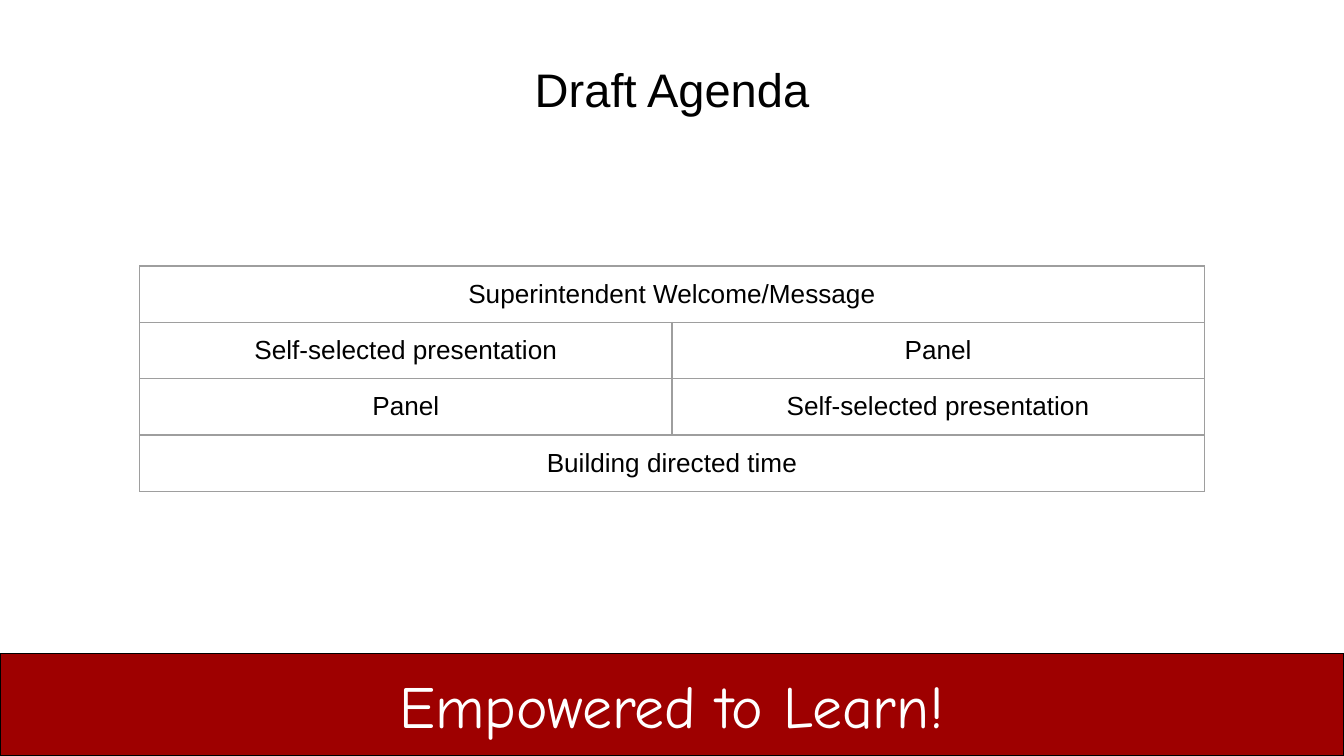
from typing import NamedTuple

from lxml.etree import SubElement
from pptx import Presentation
from pptx.dml.color import RGBColor
from pptx.enum.shapes import MSO_SHAPE as Shape
from pptx.enum.text import MSO_ANCHOR as Anchor, MSO_AUTO_SIZE as AutoSize, PP_ALIGN as Align
from pptx.oxml.ns import qn
from pptx.util import Inches, Pt

COLORS = {"white": "FFFFFF", "black": "000000", "banner": "9E0000", "border": "9E9E9E"}
WIDTH = Inches(10)
HEIGHT = WIDTH * 9 // 16
BORDER_SIDES = ("a:lnL", "a:lnR", "a:lnT", "a:lnB")


class Area(NamedTuple):
    """Percentages of the slide's width and height."""
    left: float
    top: float
    width: float
    height: float

    def lengths(self) -> tuple[int, int, int, int]:
        return (round(self.left * WIDTH / 100), round(self.top * HEIGHT / 100),
                round(self.width * WIDTH / 100), round(self.height * HEIGHT / 100))


class Session(NamedTuple):
    row: int
    column: int
    text: str
    span: int = 1


BANNER = Area(0, 86.45, 100, 13.55)
TITLE = Area(3.4, 6.2, 93.2, 11.2)
AGENDA = Area(10.4, 35.2, 79.2, 29.7)
SESSIONS = [
    Session(0, 0, "Superintendent Welcome/Message", span=2),
    Session(1, 0, "Self-selected presentation"),
    Session(1, 1, "Panel"),
    Session(2, 0, "Panel"),
    Session(2, 1, "Self-selected presentation"),
    Session(3, 0, "Building directed time", span=2),
]


def color(name: str) -> RGBColor:
    return RGBColor.from_string(COLORS[name])


def write(frame, text: str, *, size: float, font: str = "Arial",
          ink: str = "black") -> None:
    para = frame.paragraphs[0]
    para.alignment = Align.CENTER
    span = para.add_run()
    span.text = text
    span.font.size = Pt(size)
    span.font.name = font
    span.font.color.rgb = color(ink)


def set_margins(holder) -> None:
    holder.margin_left = holder.margin_right = Inches(0.1)
    holder.margin_top = holder.margin_bottom = Inches(0.1)


def add_borders(cell) -> None:
    properties = cell._tc.get_or_add_tcPr()
    for index, side in enumerate(BORDER_SIDES):
        line = properties.makeelement(qn(side), {"w": str(Pt(0.75))})
        properties.insert(index, line)
        fill = SubElement(line, qn("a:solidFill"))
        SubElement(fill, qn("a:srgbClr"), val=COLORS["border"])


def draw_banner(page) -> None:
    box = page.shapes.add_shape(Shape.RECTANGLE, *BANNER.lengths())
    box.shadow.inherit = False
    box.fill.solid()
    box.fill.fore_color.rgb = color("banner")
    box.line.color.rgb = color("black")
    box.line.width = Pt(0.75)
    box.text_frame.vertical_anchor = Anchor.MIDDLE
    write(box.text_frame, "Empowered to Learn!", size=32, font="Comic Neue", ink="white")


def format_title(page) -> None:
    title = page.shapes.title
    title.left, title.top, title.width, title.height = TITLE.lengths()
    frame = title.text_frame
    set_margins(frame)
    frame.vertical_anchor = Anchor.TOP
    frame.auto_size = AutoSize.NONE
    write(frame, "Draft Agenda", size=25.2)


def draw_agenda(page) -> None:
    rows = 1 + max(session.row for session in SESSIONS)
    table = page.shapes.add_table(rows, 2, *AGENDA.lengths()).table
    table.first_row = table.horz_banding = False
    for cell in table.iter_cells():
        cell.fill.background()
        set_margins(cell)
        add_borders(cell)
    for session in SESSIONS:
        cell = table.cell(session.row, session.column)
        if session.span > 1:
            cell.merge(table.cell(session.row, session.column + session.span - 1))
        write(cell.text_frame, session.text, size=14)


def main() -> None:
    deck = Presentation()
    deck.slide_width, deck.slide_height = WIDTH, HEIGHT
    page = deck.slides.add_slide(deck.slide_layouts[5])
    page.background.fill.solid()
    page.background.fill.fore_color.rgb = color("white")
    draw_banner(page)
    format_title(page)
    draw_agenda(page)
    deck.save("out.pptx")


if __name__ == "__main__":
    main()
